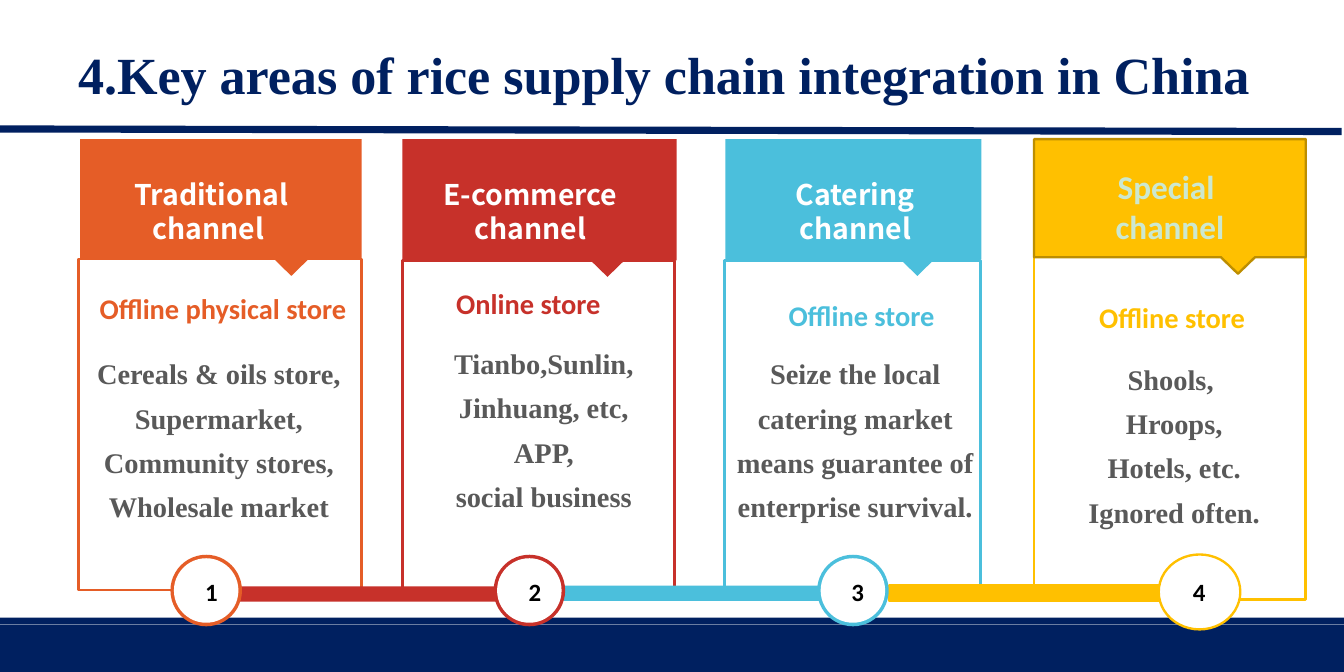
from dataclasses import dataclass
from typing import NamedTuple, Optional

from pptx import Presentation
from pptx.dml.color import RGBColor
from pptx.enum.shapes import MSO_CONNECTOR, MSO_SHAPE
from pptx.enum.text import MSO_ANCHOR, MSO_AUTO_SIZE, PP_ALIGN
from pptx.oxml.ns import qn
from pptx.util import Pt
from lxml.etree import SubElement

NAVY = RGBColor(0x00, 0x20, 0x60)
ORANGE = RGBColor(0xE5, 0x5D, 0x27)
RED = RGBColor(0xC7, 0x31, 0x2A)
BLUE = RGBColor(0x4B, 0xBF, 0xDC)
YELLOW = RGBColor(0xFF, 0xC0, 0x00)
GOLD = RGBColor(0xBD, 0x8E, 0x00)
PALE_GREEN = RGBColor(0xCC, 0xE8, 0xCF)
GREY = RGBColor(0x59, 0x59, 0x59)
WHITE = RGBColor(0xFF, 0xFF, 0xFF)
BLACK = RGBColor(0x00, 0x00, 0x00)

SERIF = "Times New Roman"
SANS = "Calibri"
HEADING_FONT = "Noto Sans CJK SC"

WIDTH, HEIGHT = 566.93, 283.46
CALLOUT_TOP = 58.7
NOTCH_HALF, NOTCH_DEPTH = 7.2, 7
RING = 1.5


class Box(NamedTuple):
    left: float
    top: float
    width: float
    height: float

    def lengths(self) -> list:
        return [Pt(value) for value in self]


class Style(NamedTuple):
    font: str
    size: float
    color: RGBColor
    spacing: Optional[float] = None


@dataclass
class Channel:
    color: RGBColor
    panel: Box
    callout_left: float
    callout_right: float
    callout_base: float
    notch: float
    heading: str
    heading_box: Optional[Box]
    label: str
    label_box: Box
    body: str
    body_box: Box


@dataclass
class Badge:
    number: str
    color: RGBColor
    circle: Box
    number_box: Box
    outlined: bool = False


@dataclass
class Bar:
    color: RGBColor
    box: Box
    line: float = 0


CHANNELS = [
    Channel(BLUE, Box(305.7, 109.8, 108, 140.4), 306, 414, 109.4, 387,
            "Catering channel", Box(324, 71.1, 73.4, 36),
            "Offline store", Box(318.8, 122.2, 89.3, 21.6),
            "Seize the local catering market means guarantee of enterprise survival.",
            Box(303.6, 142.5, 114.5, 101.5)),
    Channel(RED, Box(169.8, 109.8, 114.9, 139.7), 169.8, 285.4, 109.8, 256.3,
            "E-commerce channel", Box(169.8, 71.1, 108, 30.2),
            "Online store", Box(177.6, 117.3, 90.7, 21.6),
            "Tianbo,Sunlin, Jinhuang, etc,\nAPP,\nsocial business",
            Box(177.6, 138.1, 103.7, 84.2)),
    Channel(ORANGE, Box(33.2, 109.3, 119.3, 139.7), 33.8, 152.6, 109.4, 122.9,
            "Traditional channel ", Box(44.9, 71.1, 88.6, 38.9),
            "Offline physical store", Box(23.6, 119.2, 141.1, 20.9),
            "Cereals & oils store, Supermarket,\nCommunity stores, Wholesale market",
            Box(33.7, 142.5, 117.4, 92.9)),
    Channel(YELLOW, Box(436.2, 108, 114.4, 145), 436.2, 550.8, 108.5, 522.2,
            "Special \nchannel", None,
            "Offline store", Box(449.8, 123.1, 89.3, 21.6),
            "Shools, \nHroops,\nHotels, etc.\nIgnored often.",
            Box(439.2, 144.7, 112.3, 87.1)),
]

BARS = [
    Bar(BLUE, Box(237.6, 247, 109.4, 6.5)),
    Bar(RED, Box(99.4, 247.3, 110.9, 6.5)),
    Bar(YELLOW, Box(375, 247, 113.8, 6.5), 1),
]

BADGES = [
    Badge("3", BLUE, Box(344.7, 234, 30.2, 30.2), Box(352.1, 239.6, 15.1, 20.2)),
    Badge("2", RED, Box(208.2, 234, 30.2, 30.2), Box(215.9, 239.6, 15.1, 20.2)),
    Badge("1", ORANGE, Box(71.9, 234, 30.2, 30.2), Box(79.4, 239.6, 15.1, 20.2)),
    Badge("4", YELLOW, Box(488.8, 233.9, 34.4, 31.6), Box(496.1, 239.6, 18.7, 22.3), True),
]


def paint(shape, fill: RGBColor, line: Optional[RGBColor] = None, width: float = 0) -> None:
    shape.shadow.inherit = False
    shape.fill.solid()
    shape.fill.fore_color.rgb = fill
    if line is None:
        shape.line.fill.background()
    else:
        shape.line.color.rgb = line
        shape.line.width = Pt(width)


def add_shape(slide, kind, box: Box, fill: RGBColor,
              line: Optional[RGBColor] = None, width: float = 0) -> None:
    paint(slide.shapes.add_shape(kind, *box.lengths()), fill, line, width)


def write(text_frame, text: str, style: Style, align=PP_ALIGN.CENTER) -> None:
    text_frame.word_wrap = True
    text_frame.text = text
    for paragraph in text_frame.paragraphs:
        paragraph.alignment = align
        if style.spacing:
            paragraph.line_spacing = style.spacing
        for run in paragraph.runs:
            run.font.name = style.font
            run.font.size = Pt(style.size)
            run.font.bold = True
            run.font.color.rgb = style.color


def add_text(slide, box: Box, text: str, style: Style) -> None:
    write(slide.shapes.add_textbox(*box.lengths()).text_frame, text, style)


def add_callout(slide, channel: Channel):
    left, right, base = channel.callout_left, channel.callout_right, channel.callout_base
    outline = [
        (left, base), (channel.notch - NOTCH_HALF, base),
        (channel.notch, base + NOTCH_DEPTH), (channel.notch + NOTCH_HALF, base),
        (right, base), (right, CALLOUT_TOP),
    ]
    builder = slide.shapes.build_freeform(Pt(left), Pt(CALLOUT_TOP))
    builder.add_line_segments([(Pt(x), Pt(y)) for x, y in outline], close=True)
    return builder.convert_to_shape()


def add_channel(slide, channel: Channel) -> None:
    add_shape(slide, MSO_SHAPE.RECTANGLE, channel.panel, WHITE, channel.color, 1.13)
    callout = add_callout(slide, channel)
    if channel.heading_box:
        paint(callout, channel.color)
        add_text(slide, channel.heading_box, channel.heading, Style(HEADING_FONT, 12, WHITE))
    else:
        paint(callout, channel.color, GOLD, 1)
        callout.text_frame.vertical_anchor = MSO_ANCHOR.MIDDLE
        write(callout.text_frame, channel.heading, Style(SANS, 14, PALE_GREEN))
    add_text(slide, channel.label_box, channel.label, Style(SANS, 12, channel.color))
    add_text(slide, channel.body_box, channel.body, Style(SERIF, 12, GREY, 1.3))


def add_badge(slide, badge: Badge) -> None:
    if badge.outlined:
        add_shape(slide, MSO_SHAPE.OVAL, badge.circle, WHITE, badge.color, 1)
    else:
        left, top, width, height = badge.circle
        inner = Box(left + RING, top + RING, width - 2 * RING, height - 2 * RING)
        add_shape(slide, MSO_SHAPE.OVAL, badge.circle, badge.color)
        add_shape(slide, MSO_SHAPE.OVAL, inner, WHITE)
    add_text(slide, badge.number_box, badge.number, Style(SANS, 10.5, BLACK))


def add_frame(slide) -> None:
    for band in (Box(0, 263.5, WIDTH, HEIGHT - 263.5), Box(0, 260.6, WIDTH, 2.9)):
        add_shape(slide, MSO_SHAPE.RECTANGLE, band, NAVY)
    rule = slide.shapes.add_connector(MSO_CONNECTOR.STRAIGHT, Pt(0), Pt(54.4), Pt(565.9), Pt(55.5))
    rule.line.color.rgb = NAVY
    rule.line.width = Pt(3)
    SubElement(rule._element.spPr, qn("a:effectLst"))


def set_title(slide, text: str) -> None:
    title = slide.shapes.title
    title.left, title.top, title.width, title.height = Box(25.7, 10.8, 519.8, 43.9).lengths()
    title.text_frame.auto_size = MSO_AUTO_SIZE.NONE
    title.text_frame.vertical_anchor = MSO_ANCHOR.MIDDLE
    write(title.text_frame, text, Style(SERIF, 22, NAVY, 0.9), PP_ALIGN.LEFT)


def main() -> None:
    presentation = Presentation()
    presentation.slide_width, presentation.slide_height = Pt(WIDTH), Pt(HEIGHT)
    slide = presentation.slides.add_slide(presentation.slide_layouts[5])
    set_title(slide, "4.Key areas of rice supply chain integration in China")
    add_frame(slide)
    for channel in CHANNELS:
        add_channel(slide, channel)
    for bar in BARS:
        add_shape(slide, MSO_SHAPE.RECTANGLE, bar.box, bar.color, bar.color if bar.line else None, bar.line)
    for badge in BADGES:
        add_badge(slide, badge)
    presentation.save("out.pptx")


if __name__ == "__main__":
    main()
